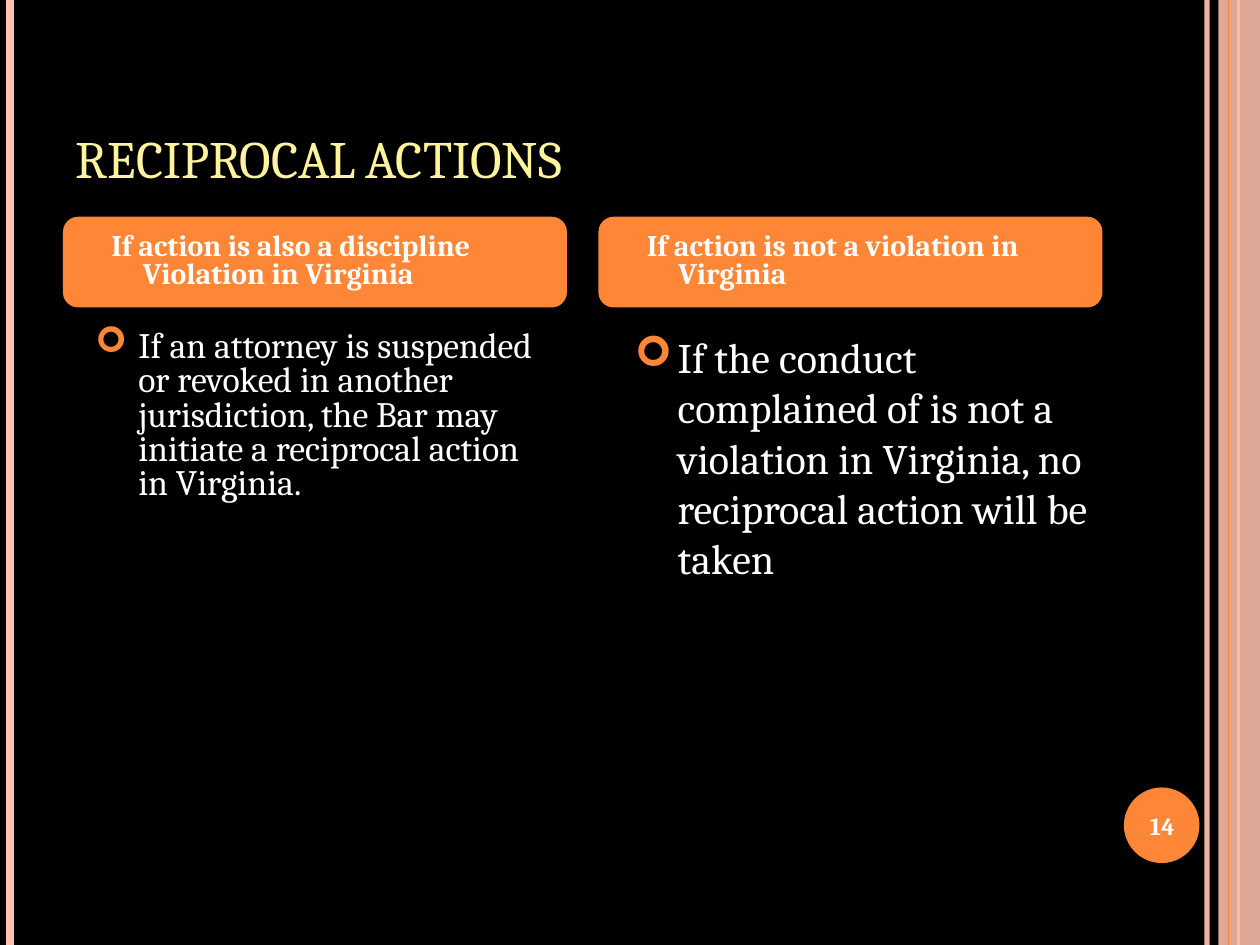
from lxml import etree
from pptx import Presentation
from pptx.dml.color import RGBColor
from pptx.enum import shapes, text
from pptx.oxml.ns import qn
from pptx.util import Inches, Pt

BLACK = RGBColor(0x00, 0x00, 0x00)
WHITE = RGBColor(0xFF, 0xFF, 0xFF)
ORANGE = RGBColor(0xFE, 0x86, 0x37)
PEACH = RGBColor(0xFE, 0xC2, 0xAC)
YELLOW = RGBColor(0xFF, 0xF3, 0x9D)
RING = "¢"  # a bold hollow circle in Wingdings


def add_alpha(fill_owner, percent):
    color = next(fill_owner.iter(qn("a:srgbClr")))
    etree.SubElement(color, qn("a:alpha")).set("val", str(percent * 1000))


def write(sp, words, size, color=WHITE, bold=False, anchor=text.MSO_ANCHOR.TOP,
          align=text.PP_ALIGN.LEFT, hanging=0, spacing=None, bullet=None):
    tf = sp.text_frame
    tf.word_wrap = True
    tf.auto_size = text.MSO_AUTO_SIZE.NONE
    tf.vertical_anchor = anchor
    p = tf.paragraphs[0]
    p.alignment = align
    p.line_spacing = spacing
    pPr = p._p.get_or_add_pPr()
    if hanging:
        pPr.set("marL", str(Inches(0.5)))
        pPr.set("indent", str(-Inches(hanging)))
    if bullet:
        clr = etree.SubElement(pPr, qn("a:buClr"))
        etree.SubElement(clr, qn("a:srgbClr")).set("val", str(ORANGE))
        font = etree.SubElement(pPr, qn("a:buFont"))
        font.set("typeface", "Wingdings")
        font.set("pitchFamily", "2")
        font.set("charset", "2")
        etree.SubElement(pPr, qn("a:buChar")).set("char", bullet)
    r = p.add_run()
    r.text = words
    r.font.name = "Cambria"
    r.font.size = Pt(size)
    r.font.bold = bold
    r.font.color.rgb = color
    return r


prs = Presentation()
prs.slide_width, prs.slide_height = Inches(10), Inches(7.5)
s = prs.slides.add_slide(prs.slide_layouts[5])
s.background.fill.solid()
s.background.fill.fore_color.rgb = BLACK

# Edge stripes; the translucent band lies under the last line only
for x, color, width, alpha in [(9.58, PEACH, 3, 93), (0.08, PEACH, 4.5, 100),
                               (9.83, ORANGE, 1.5, 100), (9.75, ORANGE, 0.75, 100)]:
    if x == 9.75:
        band = s.shapes.add_shape(shapes.MSO_SHAPE.RECTANGLE, Inches(9.67), 0,
                                  Inches(0.33), Inches(7.5))
        band.shadow.inherit = False
        band.fill.solid()
        band.fill.fore_color.rgb = PEACH
        band.line.fill.background()
        add_alpha(band._element.spPr, 87)
    line = s.shapes.add_connector(shapes.MSO_CONNECTOR.STRAIGHT, Inches(x), 0,
                                  Inches(x), Inches(7.5))
    line.line.color.rgb = color
    line.line.width = Pt(width)
    if alpha < 100:
        add_alpha(line._element.spPr, alpha)
    etree.SubElement(line._element.spPr, qn("a:effectLst"))

# Slide number in its disc
disc = s.shapes.add_shape(shapes.MSO_SHAPE.OVAL, Inches(8.92), Inches(6.25),
                          Inches(0.6), Inches(0.6))
disc.shadow.inherit = False
disc.fill.solid()
disc.fill.fore_color.rgb = ORANGE
disc.line.fill.background()
number = s.shapes.add_textbox(Inches(8.89), Inches(6.27), Inches(0.67), Inches(0.57))
write(number, "14", 14, bold=True, anchor=text.MSO_ANCHOR.MIDDLE,
      align=text.PP_ALIGN.CENTER)

# Title
title = s.shapes.title
title.left, title.top = Inches(0.5), Inches(0.3)
title.width, title.height = Inches(8.25), Inches(1.25)
r = write(title, "RECIPROCAL ACTIONS", 30, YELLOW, anchor=text.MSO_ANCHOR.BOTTOM)
r.font._element.set("cap", "small")

# Two columns: heading bar and bulleted text
columns = [
    (0.5, "If action is also a discipline Violation in Virginia", 0.5,
     "If an attorney is suspended or revoked in another jurisdiction, "
     "the Bar may initiate a reciprocal action in Virginia.", 20.4, 0.8),
    (4.75, "If action is not a violation in Virginia", 4.78,
     "If the conduct complained of is not a violation in Virginia, "
     "no reciprocal action will be taken", 24, None),
]
for bar_x, heading, body_x, body, size, spacing in columns:
    bar = s.shapes.add_shape(shapes.MSO_SHAPE.ROUNDED_RECTANGLE, Inches(bar_x),
                             Inches(1.72), Inches(4), Inches(0.72))
    bar.shadow.inherit = False
    bar.fill.solid()
    bar.fill.fore_color.rgb = ORANGE
    bar.line.fill.background()
    write(bar, heading, 17, bold=True, anchor=text.MSO_ANCHOR.MIDDLE,
          hanging=0.25, spacing=0.8)
    box = s.shapes.add_textbox(Inches(body_x), Inches(2.58), Inches(4), Inches(4.25))
    write(box, body, size, hanging=0.34, spacing=spacing, bullet=RING)

prs.save("out.pptx")
